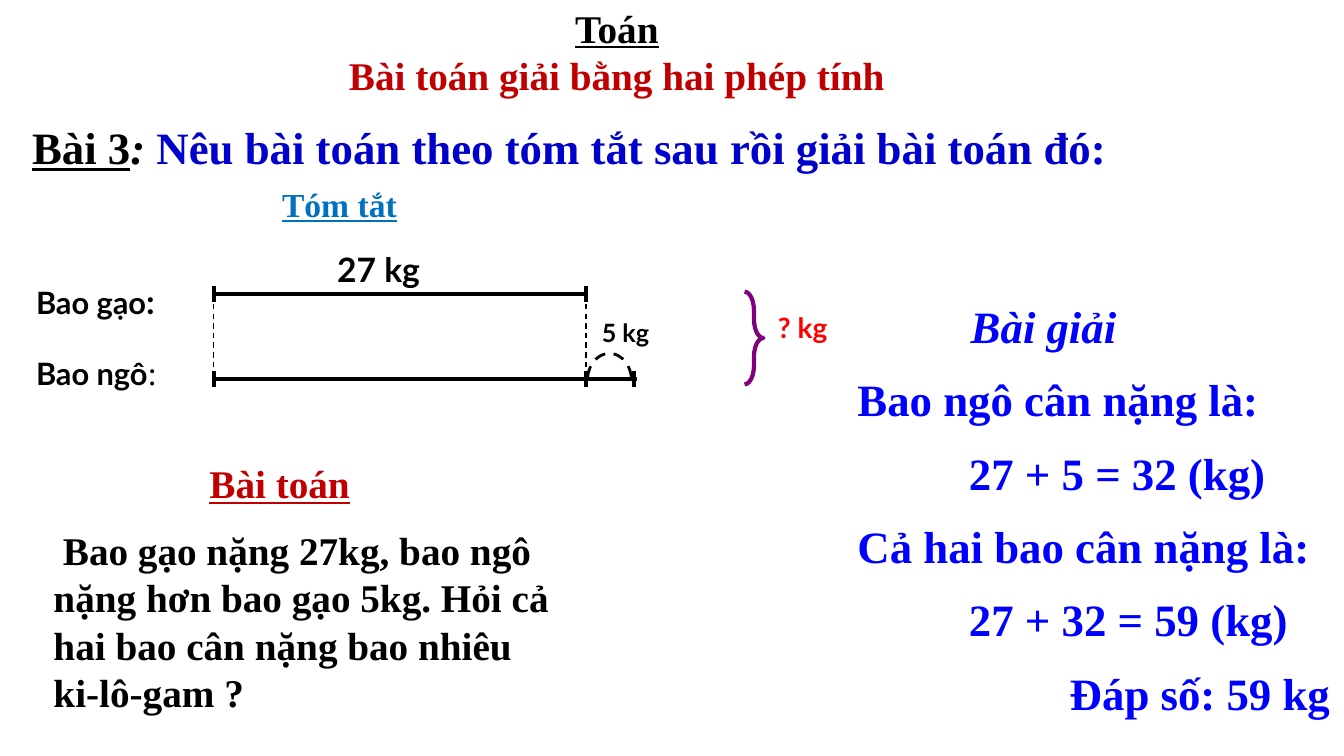
from pptx import Presentation
from pptx import util as u
from pptx.dml.color import RGBColor
from pptx.enum import dml, shapes, text
from pptx.oxml.ns import qn
from lxml import etree

SERIF = "Times New Roman"
SANS = "Lato"
START, RICE_END, CORN_END = 1.59, 4.36, 4.72
RICE_Y, CORN_Y = 2.19, 2.82
TICK = 0.06


def color(value):
    """Turn a hex string into a colour."""
    return RGBColor.from_string(value)


def span(content, size, hue, font=SERIF, bold=True, italic=False, underline=False):
    """Describe one run of text with its format."""
    return dict(content=content, size=size, hue=hue, font=font,
                bold=bold, italic=italic, underline=underline)


def add_paragraph(para, spans, align=None, indent=0, first=0, before=0, spacing=None):
    """Fill a paragraph with formatted runs."""
    para.alignment = align
    para.space_before = u.Pt(before)
    if spacing:
        para.line_spacing = spacing
    properties = para._p.get_or_add_pPr()
    properties.set("marL", str(u.Inches(indent)))
    properties.set("indent", str(u.Inches(first)))
    for item in spans:
        run = para.add_run()
        run.text = item["content"]
        font = run.font
        font.name, font.size = item["font"], u.Pt(item["size"])
        font.bold, font.italic = item["bold"], item["italic"]
        font.underline = item["underline"]
        font.color.rgb = color(item["hue"])


def add_text(page, place, *paragraphs, inset=0.1):
    """Add a text box; each paragraph is (spans, paragraph options)."""
    box = page.shapes.add_textbox(*map(u.Inches, place))
    frame = box.text_frame
    frame.word_wrap = True
    frame.auto_size = text.MSO_AUTO_SIZE.SHAPE_TO_FIT_TEXT
    frame.margin_left = frame.margin_right = u.Inches(inset)
    for index, (spans, options) in enumerate(paragraphs):
        para = frame.add_paragraph() if index else frame.paragraphs[0]
        add_paragraph(para, spans, **options)


def style_line(line, hue, width, dashed):
    """Set the colour, width and dash of a line."""
    line.color.rgb = color(hue)
    line.width = u.Pt(width)
    if dashed:
        line.dash_style = dml.MSO_LINE.DASH


def add_line(page, x1, y1, x2, y2, width=2.25, dashed=False):
    """Draw a straight black line without a shadow."""
    line = page.shapes.add_connector(
        shapes.MSO_CONNECTOR.STRAIGHT, *map(u.Inches, (x1, y1, x2, y2)))
    style_line(line.line, "000000", width, dashed)
    etree.SubElement(line._element.spPr, qn("a:effectLst"))


def add_outline(page, kind, place, adjustments, hue, width, dashed=False):
    """Draw an unfilled preset shape."""
    shape = page.shapes.add_shape(kind, *map(u.Inches, place))
    for index, value in enumerate(adjustments):
        shape.adjustments[index] = value
    shape.shadow.inherit = False
    shape.fill.background()
    style_line(shape.line, hue, width, dashed)


def add_bar(page, y, ends):
    """Draw a measured bar with a tick at each of its ends."""
    for left, right in zip(ends, ends[1:]):
        add_line(page, left, y, right, y)
    for x in (START, RICE_END, CORN_END):
        if x <= ends[-1]:
            add_line(page, x, y - TICK, x, y + TICK)


def add_diagram(page):
    """Draw the two bars, their guides, the arc, the brace and the labels."""
    add_bar(page, RICE_Y, (START, RICE_END))
    add_bar(page, CORN_Y, (START, 2.96, 4.74))
    for x in (START, RICE_END):
        add_line(page, x, RICE_Y, x, CORN_Y, width=0.75, dashed=True)
    add_outline(page, shapes.MSO_SHAPE.ARC, (4.37, 2.63, 0.33, 0.41),
                (114.195, 0), "000000", 1.5, dashed=True)
    add_outline(page, shapes.MSO_SHAPE.RIGHT_BRACE, (5.54, 2.17, 0.14, 0.69),
                (1, 0.5), "800080", 2.25)
    labels = (
        ((2.41, 1.8, 1.58, 0.4), [span("27 kg", 18, "000000", SANS)]),
        ((4.38, 2.31, 1.15, 0.33), [span("5 kg", 13.5, "000000", SANS)]),
        ((5.69, 2.26, 0.74, 0.35), [span("? kg", 15, "FF0000", SANS)]),
        ((0.17, 2.04, 1.24, 0.4), [span("Bao gạo", 16.5, "000000", SANS),
                                   span(":", 18, "000000", SANS)]),
        ((0.17, 2.57, 1.24, 0.4), [span("Bao ngô", 16.5, "000000", SANS),
                                   span(":", 18, "000000", bold=False)]),
    )
    for place, spans in labels:
        add_text(page, place, (spans, {}))


def add_headings(page):
    """Write the lesson title, the task and the section headings."""
    centre = dict(align=text.PP_ALIGN.CENTER)
    add_text(page, (2.02, -0.02, 5.14, 0.81),
             ([span("Toán", 21, "000000", underline=True)], centre),
             ([span("Bài toán giải bằng hai phép tính", 21, "C00000")], centre))
    add_text(page, (0.14, 0.84, 9.1, 0.5),
             ([span("Bài 3", 24, "000000", underline=True),
               span(": ", 24, "000000", italic=True),
               span("Nêu bài toán theo tóm tắt sau rồi giải bài toán đó:",
                    24, "0000CC")], {}))
    add_text(page, (2, 1.32, 1.25, 0.4),
             ([span("Tóm tắt", 18, "0070C0", underline=True)], {}))
    add_text(page, (1.46, 3.37, 1.25, 0.45),
             ([span("Bài toán", 21, "C00000", underline=True)], {}))


def add_problem(page):
    """Write the word problem."""
    problem = ("Bao gạo nặng 27kg, bao ngô nặng hơn bao gạo 5kg. "
               "Hỏi cả hai bao cân nặng bao nhiêu ki-lô-gam ?")
    add_text(page, (0.3, 3.87, 3.9, 1.51),
             ([span(problem, 21, "000000")], dict(first=0.07)))


def add_solution(page):
    """Write the worked solution with stepped indents."""
    statement, sum_line, answer = 0.8, 1.63, 2.38
    steps = (
        ("Bao ngô cân nặng là:", statement),
        ("27 + 5 = 32 (kg)", sum_line),
        ("Cả hai bao cân nặng là:", statement),
        ("27 + 32 = 59 (kg)", sum_line),
        ("Đáp số: 59 kg", answer),
    )
    title = ([span("Bài giải", 24, "0000FF", italic=True)],
             dict(align=text.PP_ALIGN.CENTER, spacing=0.95))
    lines = [([span(content, 24, "0000FF")],
              dict(indent=indent, before=12, spacing=0.95))
             for content, indent in steps]
    add_text(page, (5.53, 2.2, 4.47, 3.41), title, *lines, inset=0.05)


def main():
    """Build the slide and save it."""
    deck = Presentation()
    deck.slide_width = u.Inches(10)
    deck.slide_height = u.Inches(10 * 9 / 16)
    page = deck.slides.add_slide(deck.slide_layouts[6])
    add_headings(page)
    add_diagram(page)
    add_problem(page)
    add_solution(page)
    deck.save("out.pptx")


if __name__ == "__main__":
    main()
